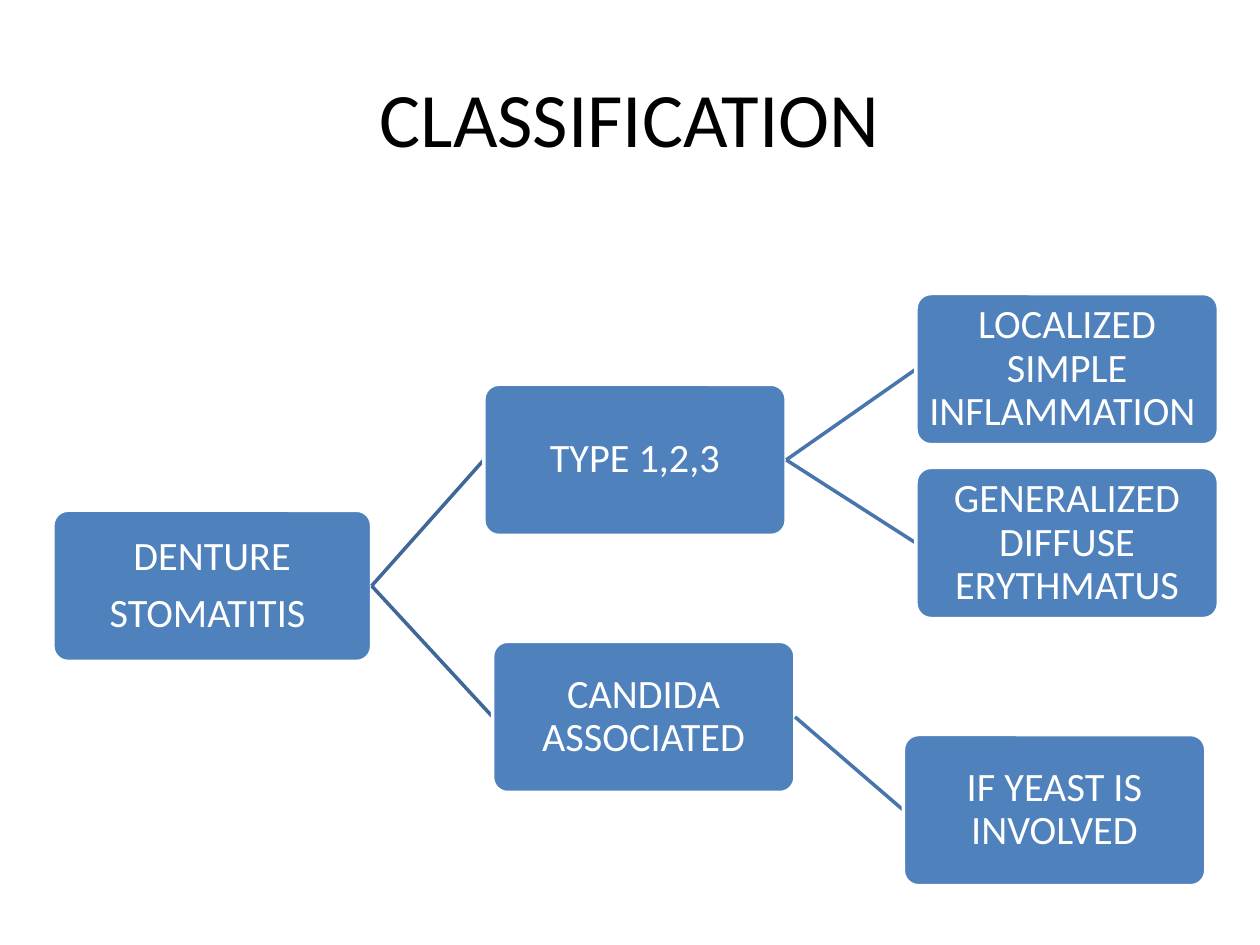
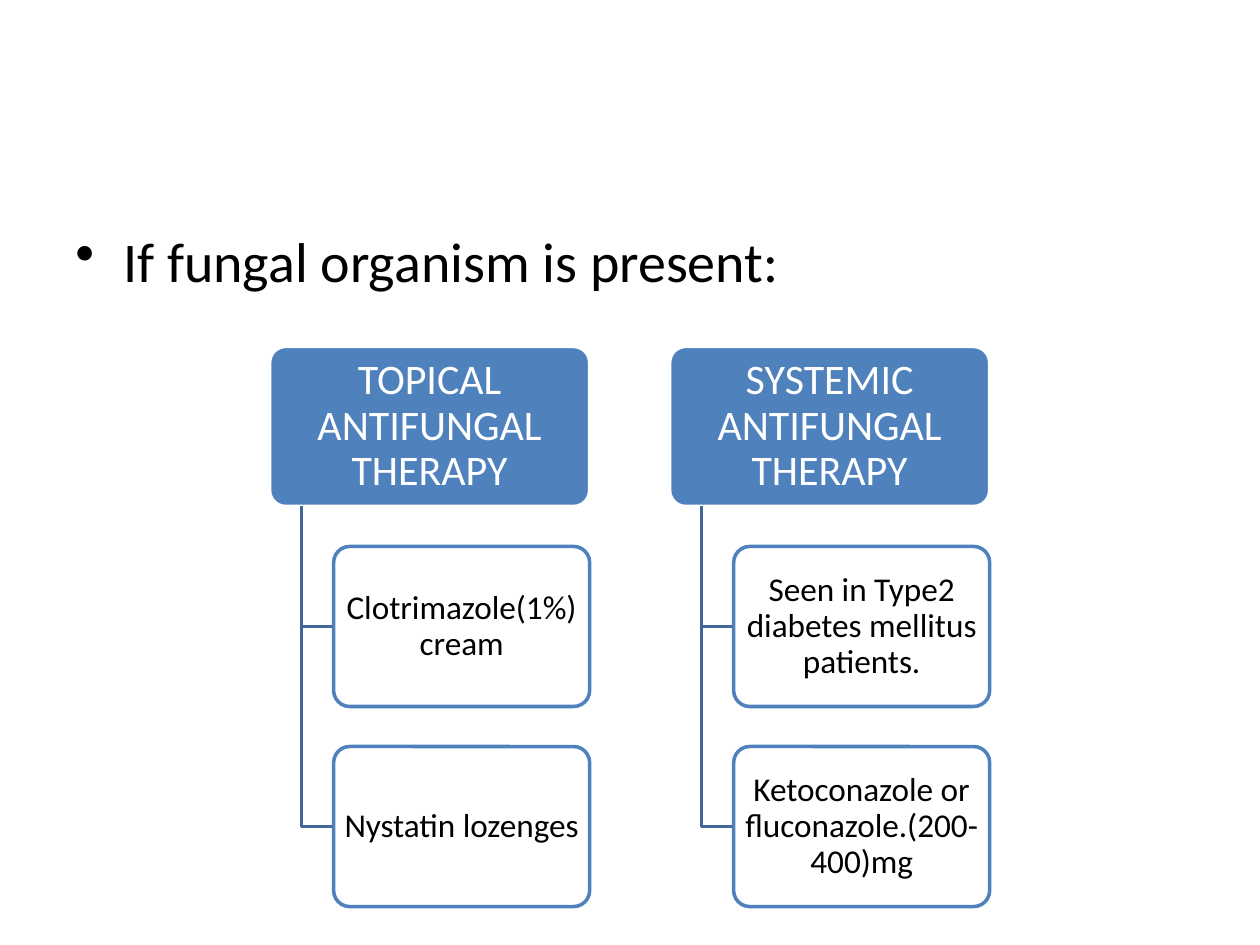
from dataclasses import dataclass

import pptx
import pptx.dml.color
import pptx.enum.shapes
import pptx.enum.text
import pptx.oxml
import pptx.oxml.ns
import pptx.util
from lxml import etree

Inches = pptx.util.Inches
Pt = pptx.util.Pt
ALIGN = pptx.enum.text.PP_ALIGN
ANCHOR = pptx.enum.text.MSO_ANCHOR

COLOURS = {
    "white": "FFFFFF",
    "black": "000000",
    "box": "4F81BD",
    "dark link": "3F6797",
    "light link": "4875AC",
}
FONT = "Calibri"
LINE_WIDTH = Pt(2)


@dataclass
class Node:
    """A box of the classification tree with its branches."""
    text: str
    left: float
    top: float
    width: float = 2.4
    link: str = "light link"
    children: tuple["Node", ...] = ()


@dataclass
class Therapy:
    """A heading with the treatments hung below it."""
    heading: str
    treatments: tuple[str, ...]


@dataclass
class BoxStyle:
    fill: str
    line: str
    font: str
    size: int
    inset_x: float
    inset_y: float
    alpha: int = 100


NODE_STYLE = BoxStyle("box", "white", "white", 23, 0.02, 0.02)
HEADING_STYLE = BoxStyle("box", "white", "white", 24, 0.05, 0.03)
TREATMENT_STYLE = BoxStyle("white", "box", "black", 19, 0.04, 0.03, alpha=90)

NODE_HEIGHT = 1.2
CLASSIFICATION = Node(
    "DENTURE\nSTOMATITIS ", 0.42, 4.05, 2.53, "dark link",
    (
        Node("TYPE 1,2,3", 3.84, 3.05, children=(
            Node("LOCALIZED SIMPLE INFLAMMATION ", 7.27, 2.33),
            Node("GENERALIZED DIFFUSE ERYTHMATUS", 7.27, 3.71),
        )),
        Node("CANDIDA ASSOCIATED", 3.91, 5.09, children=(
            Node("IF YEAST IS INVOLVED", 7.17, 5.83),
        )),
    ),
)

THERAPIES = (
    Therapy("TOPICAL ANTIFUNGAL THERAPY",
            ("Clotrimazole(1%) cream", "Nystatin lozenges")),
    Therapy("SYSTEMIC ANTIFUNGAL THERAPY",
            ("Seen in Type2 diabetes mellitus patients.",
             "Ketoconazole or fluconazole.(200-400)mg")),
)
THERAPY_LEFT, THERAPY_TOP = 2.14, 2.75
HEADING_WIDTH, THERAPY_HEIGHT = 2.54, 1.27
TREATMENT_WIDTH = 0.8 * HEADING_WIDTH
INDENT = 0.1 * HEADING_WIDTH
PITCH = 1.25  # distance between neighbours, in box sizes


def colour(name: str):
    return pptx.dml.color.RGBColor.from_string(COLOURS[name])


def write(frame, text: str, *, size: int, font: str = "black", align=ALIGN.CENTER,
          anchor=ANCHOR.MIDDLE, inset_x: float = 0.1, inset_y: float = 0.05,
          spacing: float = 1.0, after: float = 0, bullet: str = "") -> None:
    """Fill a text frame, one paragraph for each line of text."""
    frame.word_wrap = True
    frame.vertical_anchor = anchor
    frame.margin_left = frame.margin_right = Inches(inset_x)
    frame.margin_top = frame.margin_bottom = Inches(inset_y)
    for number, line in enumerate(text.split("\n")):
        paragraph = frame.add_paragraph() if number else frame.paragraphs[0]
        paragraph.alignment = align
        paragraph.line_spacing = spacing
        paragraph.space_after = Pt(after)
        run = paragraph.add_run()
        run.text = line
        run.font.name = FONT
        run.font.size = Pt(size)
        run.font.color.rgb = colour(font)
        if bullet:
            properties = paragraph._p.get_or_add_pPr()
            properties.set("marL", str(Inches(0.38)))
            properties.set("indent", str(-Inches(0.38)))
            mark = etree.SubElement(properties, pptx.oxml.ns.qn("a:buChar"))
            mark.set("char", bullet)


def add_text(slide, left: float, top: float, width: float, height: float,
             text: str, **text_format) -> None:
    area = slide.shapes.add_textbox(*map(Inches, (left, top, width, height)))
    write(area.text_frame, text, **text_format)


def add_box(slide, left: float, top: float, width: float, height: float,
            text: str, style: BoxStyle) -> None:
    box = slide.shapes.add_shape(pptx.enum.shapes.MSO_SHAPE.ROUNDED_RECTANGLE,
                                 *map(Inches, (left, top, width, height)))
    box.adjustments[0] = 0.1
    box.shadow.inherit = False
    box.fill.solid()
    box.fill.fore_color.rgb = colour(style.fill)
    if style.alpha < 100:
        tone = box._element.spPr.find(".//" + pptx.oxml.ns.qn("a:srgbClr"))
        etree.SubElement(tone, pptx.oxml.ns.qn("a:alpha")).set("val", str(style.alpha * 1000))
    box.line.color.rgb = colour(style.line)
    box.line.width = LINE_WIDTH
    write(box.text_frame, text, size=style.size, font=style.font,
          inset_x=style.inset_x, inset_y=style.inset_y,
          spacing=0.9, after=round(0.35 * style.size, 1))


def add_link(slide, start: tuple[float, float], end: tuple[float, float], tone: str) -> None:
    link = slide.shapes.add_connector(pptx.enum.shapes.MSO_CONNECTOR.STRAIGHT,
                                      *map(Inches, start + end))
    link.line.color.rgb = colour(tone)
    link.line.width = LINE_WIDTH
    etree.SubElement(link._element.spPr, pptx.oxml.ns.qn("a:effectLst"))


def add_elbow(slide, left: float, top: float, right: float, bottom: float) -> None:
    """Draw a line down and then to the right."""
    builder = slide.shapes.build_freeform(Inches(left), Inches(top))
    builder.add_line_segments([(Inches(left), Inches(bottom)),
                               (Inches(right), Inches(bottom))], close=False)
    elbow = builder.convert_to_shape()
    elbow.shadow.inherit = False
    elbow.fill.background()
    elbow.line.color.rgb = colour("dark link")
    elbow.line.width = LINE_WIDTH


def add_tree(slide, node: Node) -> None:
    """Draw a box, then each link with the branch it leads to."""
    add_box(slide, node.left, node.top, node.width, NODE_HEIGHT, node.text, NODE_STYLE)
    start = (node.left + node.width, node.top + NODE_HEIGHT / 2)
    for child in node.children:
        add_link(slide, start, (child.left, child.top + NODE_HEIGHT / 2), node.link)
        add_tree(slide, child)


def add_therapy(slide, left: float, therapy: Therapy) -> None:
    add_box(slide, left, THERAPY_TOP, HEADING_WIDTH, THERAPY_HEIGHT,
            therapy.heading, HEADING_STYLE)
    treatment_left = left + 2 * INDENT
    for row, treatment in enumerate(therapy.treatments, start=1):
        top = THERAPY_TOP + row * PITCH * THERAPY_HEIGHT
        add_elbow(slide, left + INDENT, THERAPY_TOP + THERAPY_HEIGHT,
                  treatment_left, top + THERAPY_HEIGHT / 2)
        add_box(slide, treatment_left, top, TREATMENT_WIDTH, THERAPY_HEIGHT,
                treatment, TREATMENT_STYLE)


def add_slide(deck):
    slide = deck.slides.add_slide(deck.slide_layouts[6])
    slide.background.fill.solid()
    slide.background.fill.fore_color.rgb = colour("white")
    return slide


def main() -> None:
    deck = pptx.Presentation()
    deck.slide_width, deck.slide_height = Inches(10), Inches(7.5)

    # Classification tree
    classification = add_slide(deck)
    add_text(classification, 0.5, 0.3, 9, 1.25, "CLASSIFICATION", size=44)
    add_tree(classification, CLASSIFICATION)

    # Antifungal therapies
    treatment = add_slide(deck)
    add_text(treatment, 0.5, 1.75, 9, 4.95, "If fungal organism is present:",
             size=32, align=ALIGN.LEFT, anchor=ANCHOR.TOP, bullet="•")
    for column, therapy in enumerate(THERAPIES):
        add_therapy(treatment, THERAPY_LEFT + column * PITCH * HEADING_WIDTH, therapy)

    deck.save("out.pptx")


if __name__ == "__main__":
    main()
